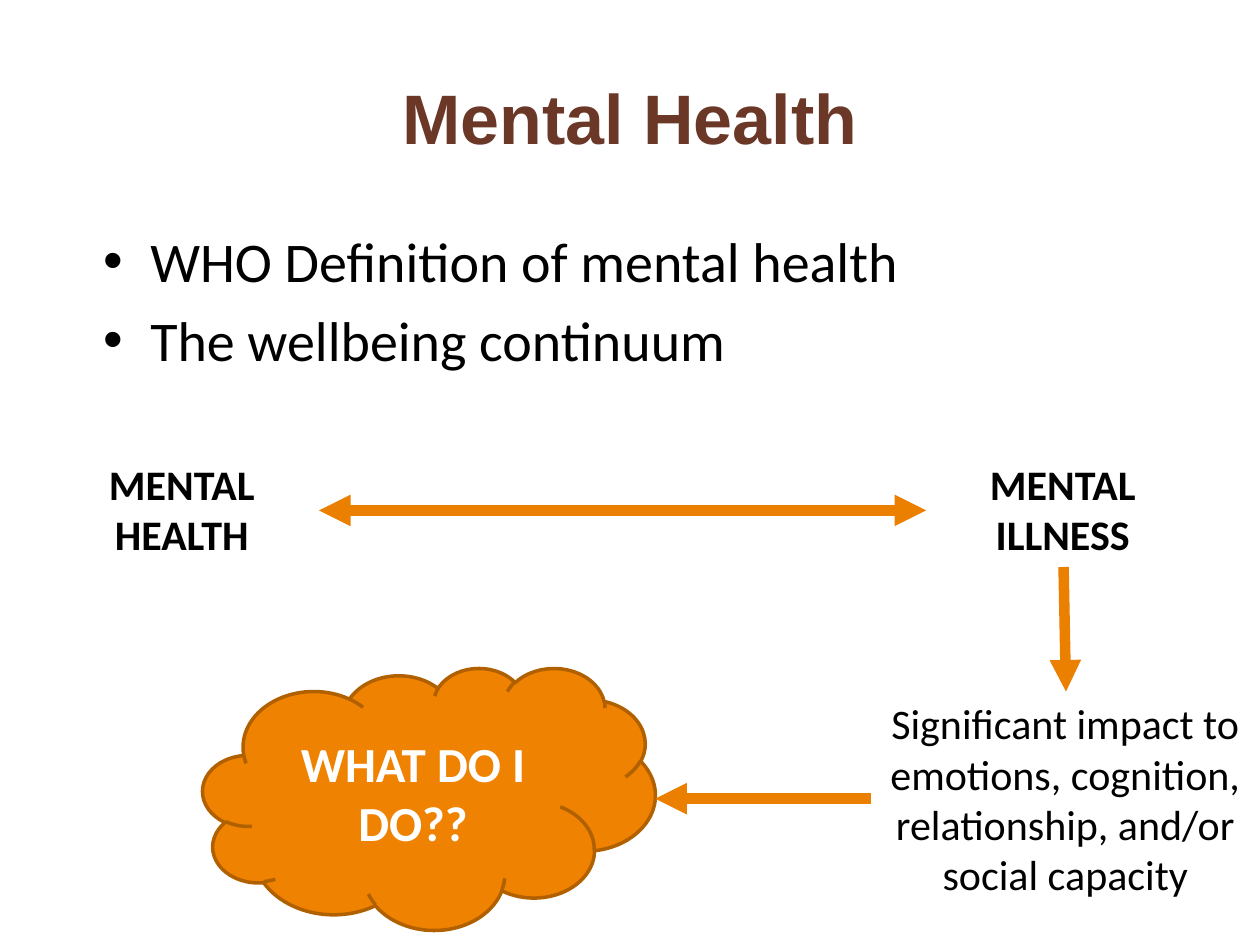
from lxml.etree import SubElement
from pptx import Presentation
from pptx.dml.color import RGBColor
from pptx.enum.shapes import MSO_CONNECTOR as Connector, MSO_SHAPE as Shape
from pptx.enum.text import MSO_ANCHOR as Anchor, PP_ALIGN as Align
from pptx.oxml.ns import qn
from pptx.util import Cm, Pt

COLORS = {
    "title": "6B3727",
    "text": "000000",
    "arrow": "EA7F00",
    "cloud": "EF8200",
    "outline": "B16000",
    "light": "FFFFFF",
}


def color(name):
    return RGBColor.from_string(COLORS[name])


def write(paragraph, text, ink, align=Align.CENTER, **formats):
    paragraph.alignment = align
    span = paragraph.add_run()
    span.text = text
    span.font.color.rgb = color(ink)
    for name, value in {"name": "Calibri", "bold": False, **formats}.items():
        setattr(span.font, name, value)


deck = Presentation()
deck.slide_width, deck.slide_height = Cm(25.4), Cm(19.05)
page = deck.slides.add_slide(deck.slide_layouts[5])

title = page.shapes.title
placement = {"left": 1.27, "top": 0.76, "width": 22.86, "height": 3.18}
for name, value in placement.items():
    setattr(title, name, Cm(value))
title.text_frame.vertical_anchor = Anchor.MIDDLE
write(title.text_frame.paragraphs[0], "Mental Health", "title",
      name="Arial", size=Pt(40), bold=True)

topics = page.shapes.add_textbox(Cm(1.83), Cm(4.45), Cm(22.86), Cm(5.69))
topics.text_frame.word_wrap = True
for index, topic in enumerate(["WHO Definition of mental health", "The wellbeing continuum"]):
    frame = topics.text_frame
    paragraph = frame.add_paragraph() if index else frame.paragraphs[0]
    if index:
        paragraph.space_before = Pt(6.4)
    properties = paragraph._p.get_or_add_pPr()
    properties.set("marL", str(Cm(0.95)))
    properties.set("indent", str(-Cm(0.95)))
    SubElement(properties, qn("a:buFont"), typeface="Arial")
    SubElement(properties, qn("a:buChar"), char="•")
    write(paragraph, topic, "text", Align.LEFT, size=Pt(32))

labels = [
    ("MENTAL HEALTH", (0.91, 9.12, 5.51, 2.31), True),
    ("MENTAL ILLNESS", (18.67, 9.12, 5.51, 2.31), True),
    ("Significant impact to emotions, cognition, relationship, and/or social capacity",
     (17.55, 13.94, 7.85, 4.37), False),
]
for text, place, bold in labels:
    box = page.shapes.add_textbox(*map(Cm, place))
    box.text_frame.word_wrap = True
    write(box.text_frame.paragraphs[0], text, "text", size=Pt(24), bold=bold)

cloud = page.shapes.add_shape(Shape.CLOUD, Cm(4.09), Cm(13.46), Cm(9.12), Cm(5.28))
cloud.shadow.inherit = False
cloud.fill.solid()
cloud.fill.fore_color.rgb = color("cloud")
cloud.line.color.rgb = color("outline")
cloud.line.width = Pt(2)
cloud.text_frame.word_wrap = True
cloud.text_frame.vertical_anchor = Anchor.MIDDLE
write(cloud.text_frame.paragraphs[0], "WHAT DO I DO??", "light", size=Pt(28), bold=True)

arrows = [
    ((6.43, 10.29, 18.67, 10.29), ["headEnd", "tailEnd"]),
    ((21.44, 11.43, 21.49, 13.94), ["tailEnd"]),
    ((17.55, 16.1, 13.21, 16.1), ["tailEnd"]),
]
for ends, tips in arrows:
    arrow = page.shapes.add_connector(Connector.STRAIGHT, *map(Cm, ends))
    arrow.line.color.rgb = color("arrow")
    arrow.line.width = Pt(6)
    for tip in tips:
        SubElement(arrow.line._get_or_add_ln(), qn(f"a:{tip}"), type="triangle")
    SubElement(arrow._element.spPr, qn("a:effectLst"))

deck.save("out.pptx")
